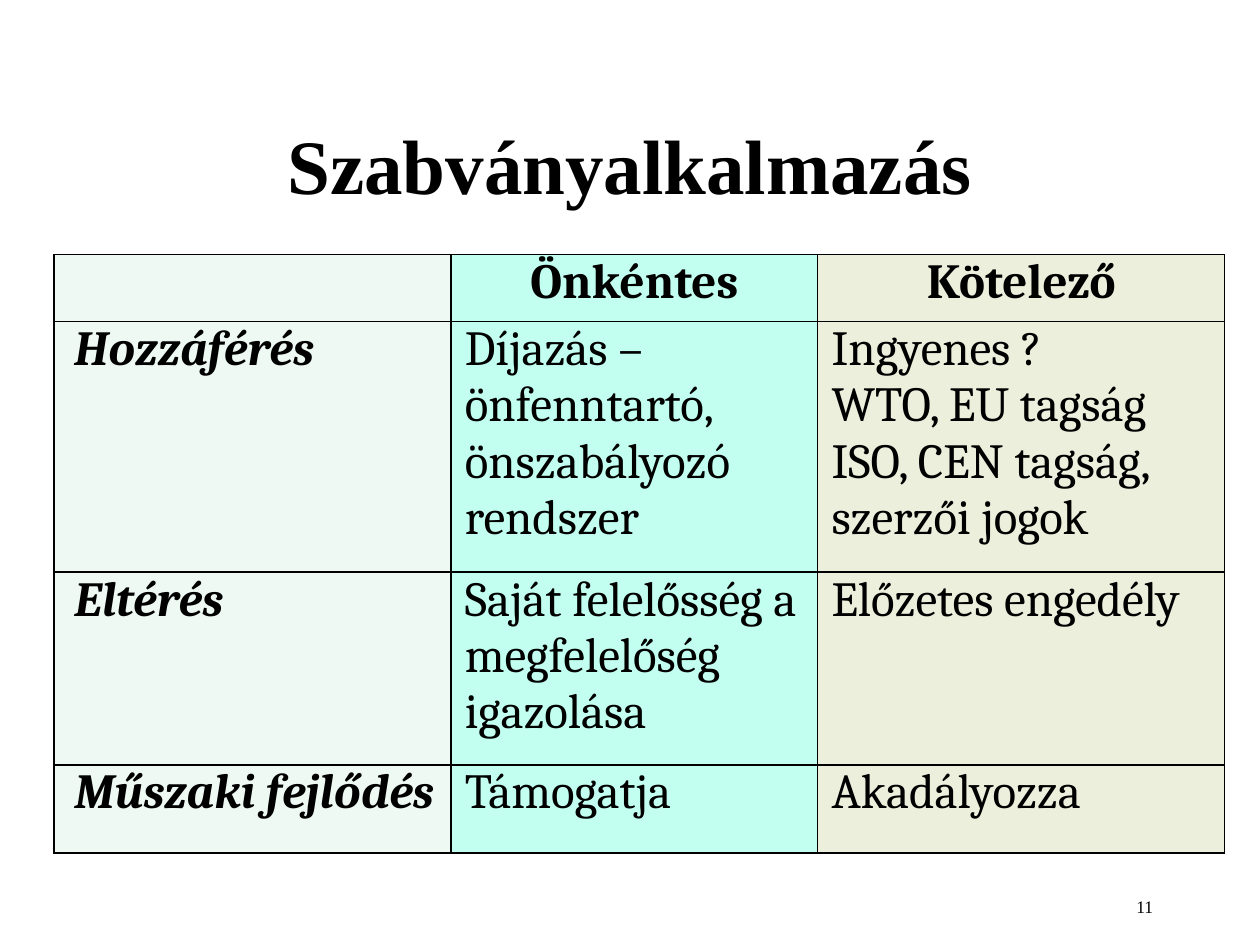
"""Build a slide comparing voluntary and mandatory use of standards."""
import pptx
import pptx.dml.color
import pptx.enum.text
import pptx.oxml.ns
import pptx.util
from lxml import etree

Inches = pptx.util.Inches
Pt = pptx.util.Pt
ALIGN = pptx.enum.text.PP_ALIGN
ANCHOR = pptx.enum.text.MSO_ANCHOR

BLACK = pptx.dml.color.RGBColor(0x00, 0x00, 0x00)
MINT = pptx.dml.color.RGBColor(0xEE, 0xF9, 0xF4)
AQUA = pptx.dml.color.RGBColor(0xC2, 0xFF, 0xF0)
SAND = pptx.dml.color.RGBColor(0xED, 0xEF, 0xDD)

COLUMN_FILLS = [MINT, AQUA, SAND]
COLUMN_WIDTHS = [3.15, 2.91, 3.23]
ROW_HEIGHTS = [0.53, 1.99, 1.53, 0.7]
LABEL_INDENT = 0.09
BODY_INDENT = 0.04

ROWS = [
    ["", "Önkéntes", "Kötelező"],
    ["Hozzáférés", "Díjazás – önfenntartó, önszabályozó rendszer",
     "Ingyenes ?\nWTO, EU tagság\nISO, CEN tagság, szerzői jogok"],
    ["Eltérés", "Saját felelősség a megfelelőség igazolása", "Előzetes engedély"],
    ["Műszaki fejlődés", "Támogatja", "Akadályozza"],
]


def add_runs(paragraph, text, size, font_name, bold=False, italic=False):
    for index, line in enumerate(text.split("\n")):
        if index:
            paragraph.add_line_break()
        run = paragraph.add_run()
        run.text = line
        run.font.size = Pt(size)
        run.font.name = font_name
        run.font.bold = bold
        run.font.italic = italic
        run.font.color.rgb = BLACK


def add_text(slide, position, text, size, align, anchor, bold=False):
    box = slide.shapes.add_textbox(*[Inches(value) for value in position])
    frame = box.text_frame
    frame.word_wrap = True
    frame.vertical_anchor = anchor
    paragraph = frame.paragraphs[0]
    paragraph.alignment = align
    add_runs(paragraph, text, size, "Times New Roman", bold)


def set_borders(cell):
    properties = cell._tc.get_or_add_tcPr()
    qualified = pptx.oxml.ns.qn
    for side in ("lnL", "lnR", "lnT", "lnB"):
        line = etree.SubElement(properties, qualified(f"a:{side}"), w=str(Pt(1)))
        fill = etree.SubElement(line, qualified("a:solidFill"))
        etree.SubElement(fill, qualified("a:srgbClr"), val=str(BLACK))


def fill_cell(cell, text, row, column):
    set_borders(cell)
    cell.fill.solid()
    cell.fill.fore_color.rgb = COLUMN_FILLS[column]
    cell.margin_left = cell.margin_right = Inches(0.07)
    cell.margin_top = cell.margin_bottom = 0
    if not text:
        return
    is_header = row == 0
    is_label = column == 0
    paragraph = cell.text_frame.paragraphs[0]
    if is_header:
        paragraph.alignment = ALIGN.CENTER
    else:
        indent = LABEL_INDENT if is_label else BODY_INDENT
        paragraph._p.get_or_add_pPr().set("marL", str(Inches(indent)))
    if column == 1 and row in (1, 2):
        paragraph.space_after = Pt(6)
    add_runs(paragraph, text, 28, "Cambria", is_header or is_label, is_label)


def add_comparison_table(slide):
    frame = slide.shapes.add_table(
        len(ROWS), len(COLUMN_WIDTHS), Inches(0.43), Inches(2.02),
        Inches(sum(COLUMN_WIDTHS)), Inches(sum(ROW_HEIGHTS)))
    table = frame.table
    table.horz_banding = False
    table.first_row = False
    for column, width in zip(table.columns, COLUMN_WIDTHS):
        column.width = Inches(width)
    for row, height in zip(table.rows, ROW_HEIGHTS):
        row.height = Inches(height)
    for row, texts in enumerate(ROWS):
        for column, text in enumerate(texts):
            fill_cell(table.cell(row, column), text, row, column)


def main():
    presentation = pptx.Presentation()
    presentation.slide_width = Inches(10)
    presentation.slide_height = Inches(7.5)
    slide = presentation.slides.add_slide(presentation.slide_layouts[6])
    add_text(slide, (0.75, 0.67, 8.5, 1.25), "Szabványalkalmazás", 44,
             ALIGN.CENTER, ANCHOR.MIDDLE, bold=True)
    add_text(slide, (7.17, 7.06, 2.08, 0.28), "11", 10, ALIGN.RIGHT, ANCHOR.TOP)
    add_comparison_table(slide)
    presentation.save("out.pptx")


if __name__ == "__main__":
    main()
